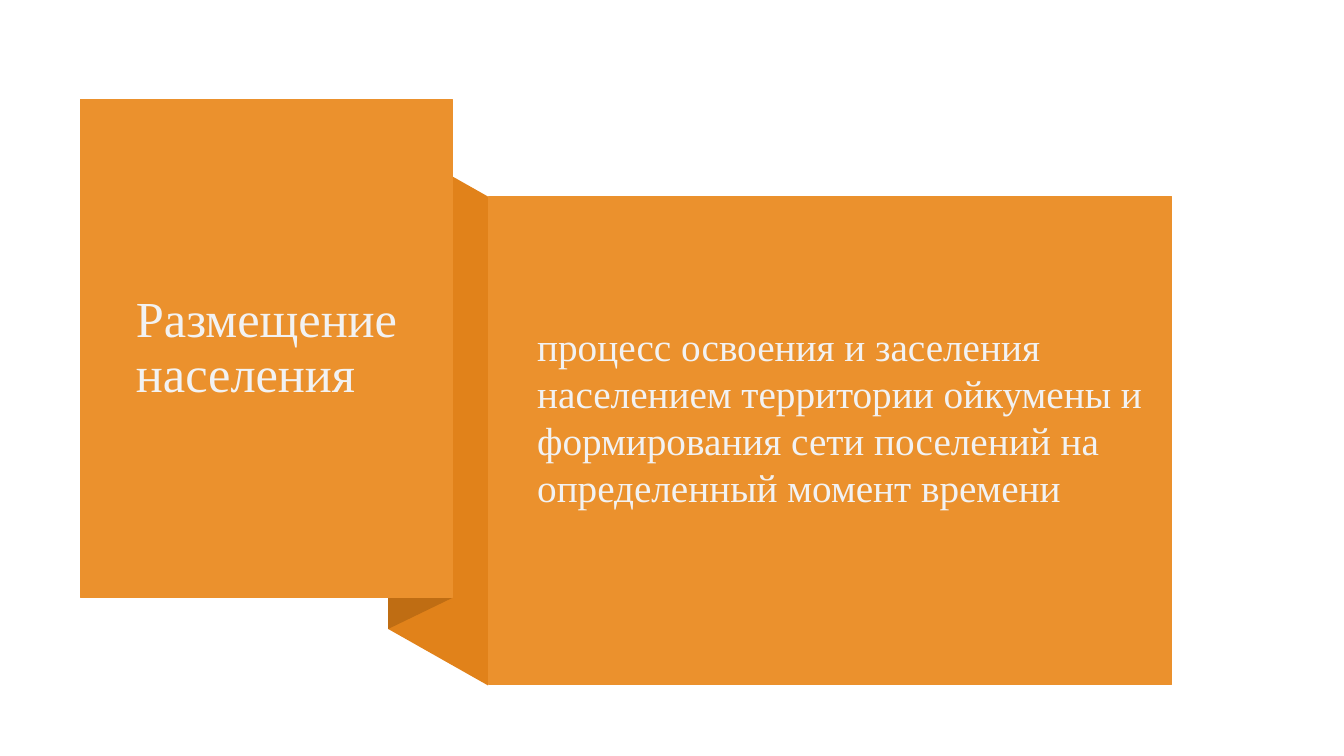
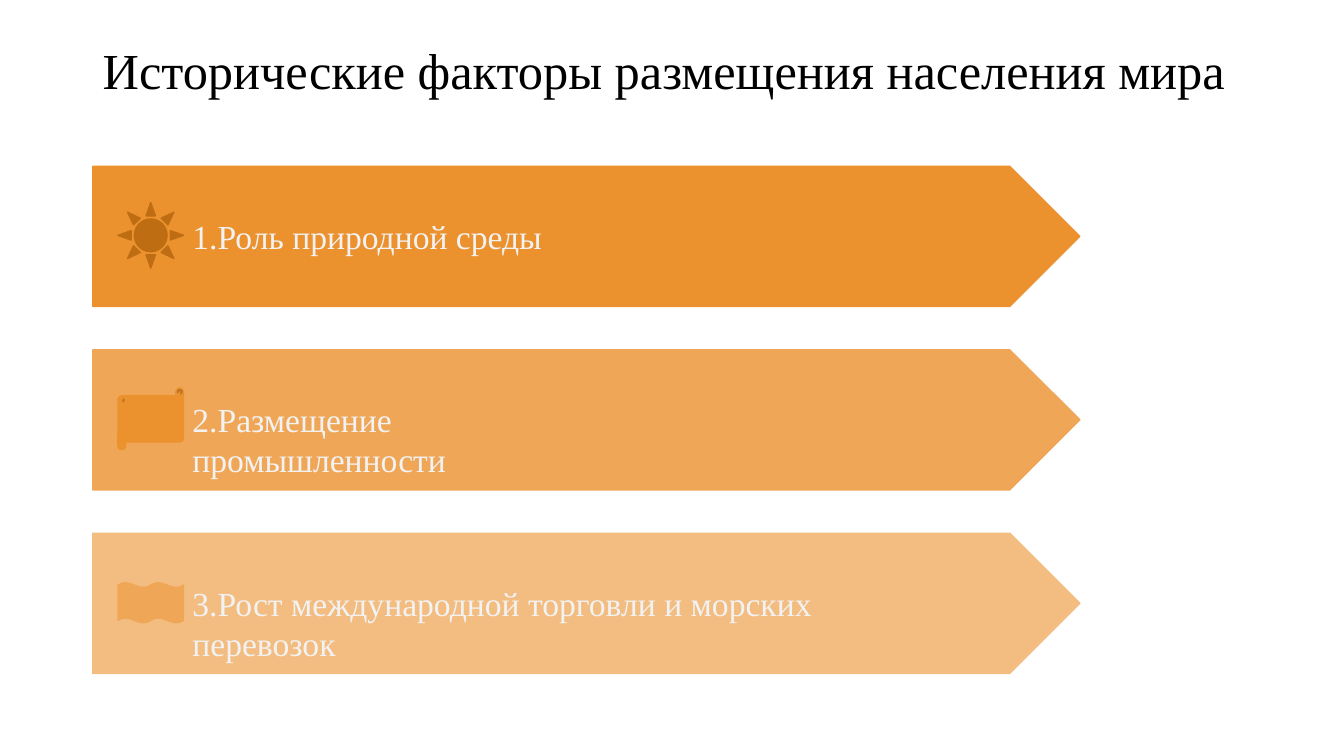
from pptx import Presentation
from pptx.dml.color import RGBColor
from pptx.enum.shapes import MSO_SHAPE as Preset
from pptx.enum.text import MSO_ANCHOR as Anchor
from pptx.util import Emu, Pt

SCALE = 9144
FONT = "Times New Roman"
ORANGE, FOLD, SHADE = "EB912D", "E1821A", "BF6D13"
MEDIUM, PALE = "EFA757", "F3BD81"
LIGHT, BLACK = "F2F2F2", "000000"

BANNER_TOP, BANNER_STEP = 165, 182
BANNERS = [
    ("1.Роль природной среды", 400, ORANGE, Preset.SUN, (201, 65), SHADE),
    ("2.Размещение промышленности", 471, MEDIUM, Preset.HORIZONTAL_SCROLL, (385, 61), ORANGE),
    ("3.Рост международной торговли и морских перевозок", 771, PALE,
     Preset.DOUBLE_WAVE, (578, 40), MEDIUM),
]


def px(length):
    """Turn px into EMU."""
    return Emu(length * SCALE)


def color(value):
    """Turn a hex string into a colour."""
    return RGBColor.from_string(value)


def apply_format(target, values):
    """Set each named attribute on the target."""
    for name, value in values.items():
        setattr(target, name, value)


def paint(shape, fill):
    """Give a shape a flat fill with an outline of the same colour."""
    shape.shadow.inherit = False
    shape.fill.solid()
    shape.fill.fore_color.rgb = color(fill)
    shape.line.color.rgb = color(fill)
    shape.line.width = Pt(1)


def add_block(slide, preset, box, fill):
    """Add a preset shape in one colour."""
    paint(slide.shapes.add_shape(preset, *map(px, box)), fill)


def add_polygon(slide, points, fill):
    """Add a closed outline through the points."""
    builder = slide.shapes.build_freeform(*points[0], scale=SCALE)
    builder.add_line_segments(points[1:], close=True)
    outline = builder.convert_to_shape()
    paint(outline, fill)
    outline.line.fill.background()


def add_text(slide, box, text, size, ink=LIGHT, anchor=Anchor.TOP, spacing=1.0):
    """Add a wrapped paragraph of text."""
    frame = slide.shapes.add_textbox(*map(px, box)).text_frame
    apply_format(frame, {"word_wrap": True, "vertical_anchor": anchor})
    paragraph = frame.paragraphs[0]
    paragraph.text = text
    paragraph.line_spacing = spacing
    for run in paragraph.runs:
        apply_format(run.font, {"name": FONT, "size": Pt(size)})
        run.font.color.rgb = color(ink)


def add_title(slide, box, text, ink):
    """Add a slide title."""
    add_text(slide, box, text, 36, ink, Anchor.MIDDLE, 0.9)


def build_definition(slide):
    """Build the folded ribbon with a term and its definition."""
    add_polygon(slide, [(385, 139), (484, 195), (484, 680), (385, 624)], FOLD)
    add_polygon(slide, [(385, 593), (449, 593), (385, 624)], SHADE)
    for panel in ((80, 99, 369, 494), (485, 195, 677, 484)):
        add_block(slide, Preset.RECTANGLE, panel, ORANGE)
    add_title(slide, (125, 315, 1169, 62), "Размещение \vнаселения", LIGHT)
    add_text(slide, (523, 315, 667, 199),
             "процесс освоения и заселения населением территории ойкумены "
             "и формирования сети поселений на определенный момент времени", 28)


def build_factors(slide):
    """Build the list of factors on arrow banners."""
    add_title(slide, (92, 0, 1150, 145),
              "Исторические факторы размещения населения мира", BLACK)
    for index, (factor, width, fill, icon, (icon_top, icon_height), tint) in enumerate(BANNERS):
        top = BANNER_TOP + index * BANNER_STEP
        add_block(slide, Preset.PENTAGON, (92, top, 979, 139), fill)
        add_block(slide, icon, (117, icon_top, 65, icon_height), tint)
        add_text(slide, (181, top + 44, width, 50), factor, 24)


def main():
    """Build and save the presentation."""
    deck = Presentation()
    apply_format(deck, {"slide_width": px(1333), "slide_height": px(750)})
    blank = deck.slide_layouts[6]
    for build in (build_definition, build_factors):
        build(deck.slides.add_slide(blank))
    deck.save("out.pptx")


if __name__ == "__main__":
    main()
